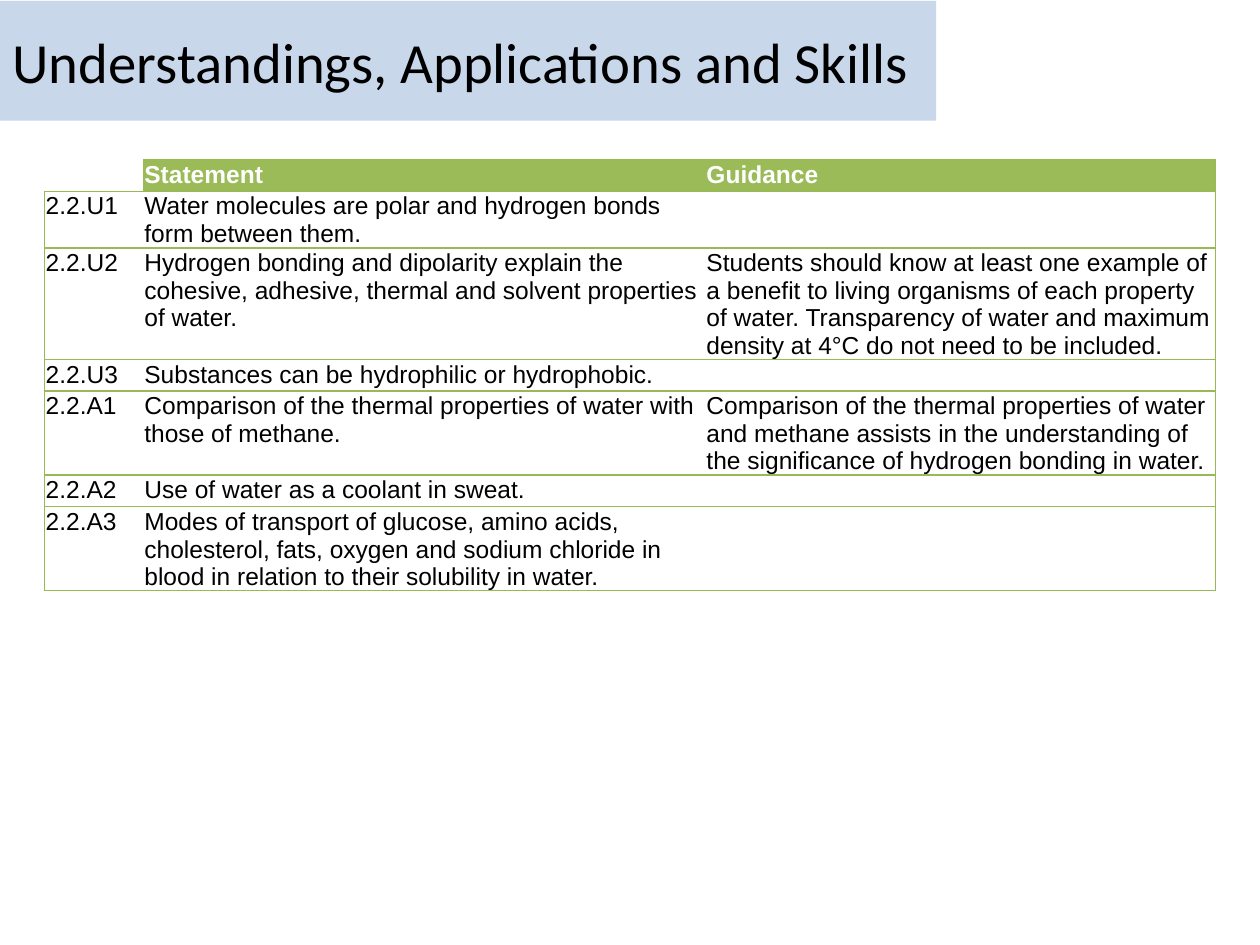
import pptx
import pptx.dml.color
import pptx.enum.text
import pptx.oxml
import pptx.oxml.ns
import pptx.util
from lxml import etree

Pt = pptx.util.Pt
NO_STYLE = "{2D5ABB26-0587-4C30-8999-92F81FD0307C}"


def colour(hex_string):
    return pptx.dml.color.RGBColor.from_string(hex_string)


class SlideBuilder:
    title_font, title_size = "Calibri", 32.4
    body_font, body_size = "Arial", 14
    text, white = "000000", "FFFFFF"
    band, header, rule = "B9CDE5", "9BBB59", "98B955"
    rule_width = 0.75

    def __init__(self, deck):
        self.slide = deck.slides.add_slide(deck.slide_layouts[5])

    def add_run(self, paragraph, words, font, size, hex_string, bold=False):
        run = paragraph.add_run()
        run.text = words
        run.font.name, run.font.size, run.font.bold = font, Pt(size), bold
        run.font.color.rgb = colour(hex_string)

    def title(self, words, left, top, width, height, opacity):
        heading = self.slide.shapes.title
        heading.left, heading.top = Pt(left), Pt(top)
        heading.width, heading.height = Pt(width), Pt(height)
        heading.fill.solid()
        heading.fill.fore_color.rgb = colour(self.band)
        tint = heading.fill._xPr.find(".//" + pptx.oxml.ns.qn("a:srgbClr"))
        etree.SubElement(tint, pptx.oxml.ns.qn("a:alpha"), val=str(opacity * 1000))
        frame = heading.text_frame
        frame.word_wrap = True
        frame.auto_size = pptx.enum.text.MSO_AUTO_SIZE.NONE
        frame.vertical_anchor = pptx.enum.text.MSO_ANCHOR.MIDDLE
        frame.paragraphs[0].alignment = pptx.enum.text.PP_ALIGN.LEFT
        self.add_run(frame.paragraphs[0], words, self.title_font, self.title_size, self.text)

    def borders(self, cell, sides):
        properties = cell._tc.get_or_add_tcPr()
        for side in "LRTB":
            if side in sides:
                properties.append(pptx.oxml.parse_xml(
                    f'<a:ln{side} {pptx.oxml.ns.nsdecls("a")} w="{Pt(self.rule_width)}">'
                    f'<a:solidFill><a:srgbClr val="{self.rule}"/></a:solidFill></a:ln{side}>'))

    def cell(self, cell, words, is_header, sides):
        cell.margin_left = cell.margin_right = cell.margin_top = Pt(0.75)
        cell.margin_bottom = 0
        self.borders(cell, sides)
        if is_header and not words:
            cell.fill.background()
        else:
            cell.fill.solid()
            cell.fill.fore_color.rgb = colour(self.header if is_header else self.white)
        paragraph = cell.text_frame.paragraphs[0]
        paragraph.font.size = Pt(self.body_size)
        if words:
            self.add_run(paragraph, words, self.body_font, self.body_size,
                         self.white if is_header else self.text, is_header)

    def table(self, rows, left, top, widths, heights):
        table = self.slide.shapes.add_table(
            len(rows), len(widths), Pt(left), Pt(top), Pt(sum(widths)), Pt(sum(heights))).table
        table._tbl.tblPr.find(pptx.oxml.ns.qn("a:tableStyleId")).text = NO_STYLE
        table.horz_banding = False
        for column, width in zip(table.columns, widths):
            column.width = Pt(width)
        for r, (row, height) in enumerate(zip(rows, heights)):
            table.rows[r].height = Pt(height)
            for c, words in enumerate(row):
                # Rules above and below each row, and around the outside
                sides = "TB" + "L" * (c == 0) + "R" * (c == len(widths) - 1)
                if r == 0 and not words:
                    sides = "B"
                self.cell(table.cell(r, c), words, r == 0, sides)


def main():
    deck = pptx.Presentation()
    deck.slide_width, deck.slide_height = Pt(720), Pt(540)
    builder = SlideBuilder(deck)

    # Title band
    builder.title("Understandings, Applications and Skills", 0, 0.5, 535, 68.5, opacity=78)

    # Syllabus statements
    statements = [
        ("", "Statement", "Guidance"),
        ("2.2.U1", "Water molecules are polar and hydrogen bonds form between them.", ""),
        ("2.2.U2", "Hydrogen bonding and dipolarity explain the cohesive, adhesive, "
         "thermal and solvent properties of water.",
         "Students should know at least one example of a benefit to living organisms "
         "of each property of water. Transparency of water and maximum density at 4°C "
         "do not need to be included."),
        ("2.2.U3", "Substances can be hydrophilic or hydrophobic.", ""),
        ("2.2.A1", "Comparison of the thermal properties of water with those of methane.",
         "Comparison of the thermal properties of water and methane assists in the "
         "understanding of the significance of hydrogen bonding in water."),
        ("2.2.A2", "Use of water as a coolant in sweat.", ""),
        ("2.2.A3", "Modes of transport of glucose, amino acids, cholesterol, fats, oxygen "
         "and sodium chloride in blood in relation to their solubility in water.", ""),
    ]
    builder.table(statements, 25.4, 91.4, widths=[56.4, 321.2, 291.6],
                  heights=[17.75, 32.5, 64, 17.75, 48, 18.25, 48])
    deck.save("out.pptx")


if __name__ == "__main__":
    main()
